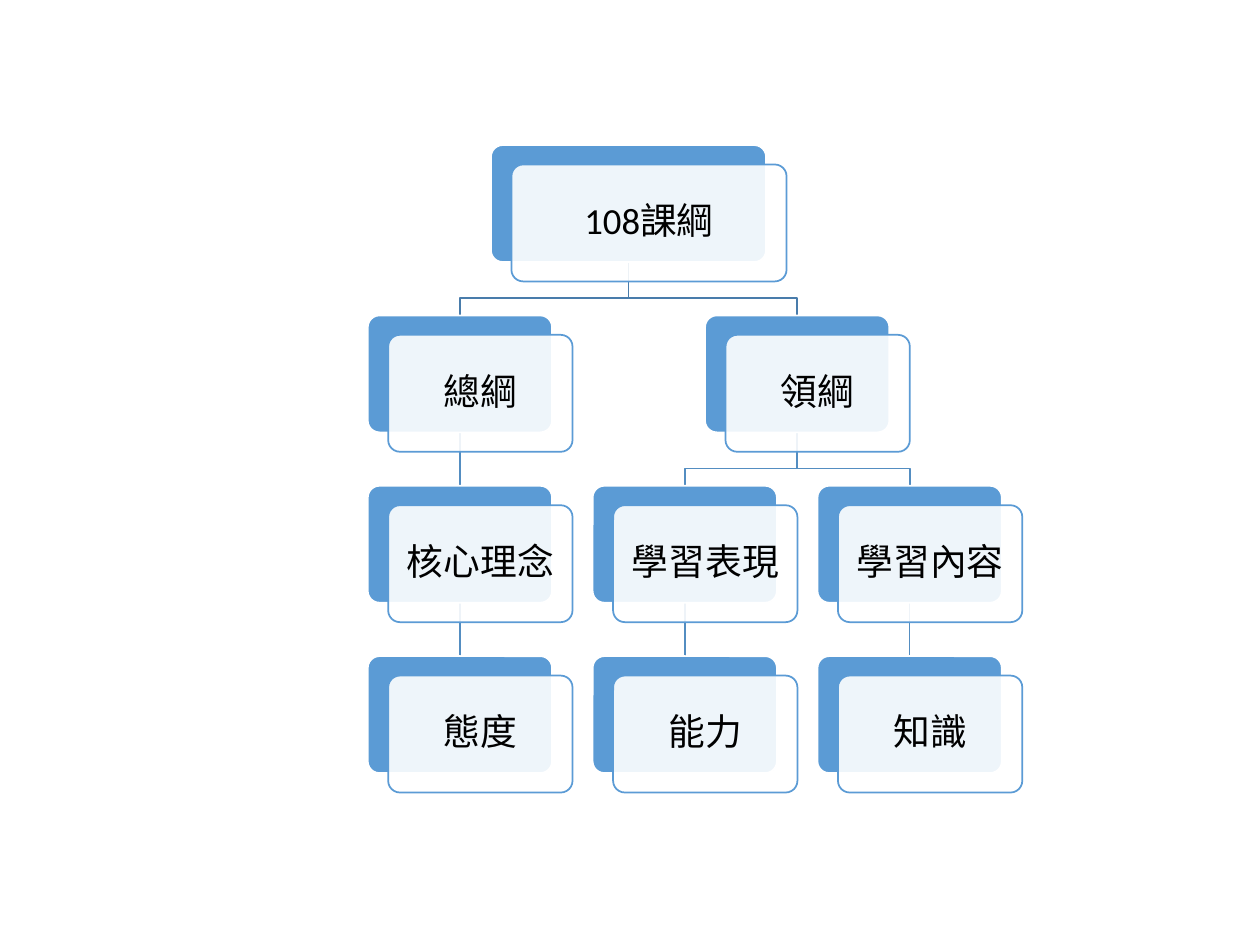
"""Build a one-slide curriculum hierarchy of layered cards."""
from lxml import etree
from pptx import Presentation
from pptx.dml.color import RGBColor
from pptx.enum.shapes import MSO_CONNECTOR, MSO_SHAPE
from pptx.enum.text import MSO_ANCHOR, PP_ALIGN
from pptx.oxml.ns import qn
from pptx.util import Pt

ROUND = MSO_SHAPE.ROUNDED_RECTANGLE
STRAIGHT = MSO_CONNECTOR.STRAIGHT
MIDDLE = MSO_ANCHOR.MIDDLE
CENTER = PP_ALIGN.CENTER

# name: (column, level, width, parent)
NODES = {
    "108課綱": (0.75, 0, 157.2, None),
    "總綱": (0, 1, 105.3, "108課綱"),
    "核心理念": (0, 2, 105.3, "總綱"),
    "態度": (0, 3, 105.3, "核心理念"),
    "領綱": (1.5, 1, 105.3, "108課綱"),
    "學習表現": (1, 2, 105.3, "領綱"),
    "能力": (1, 3, 105.3, "學習表現"),
    "學習內容": (2, 2, 105.3, "領綱"),
    "知識": (2, 3, 105.3, "學習內容"),
}
THEME = {
    "font": "Calibri",
    "size": Pt(21),
    "text": RGBColor.from_string("000000"),
    "accent": RGBColor.from_string("5B9BD5"),
    "white": RGBColor.from_string("FFFFFF"),
    "top_link": RGBColor.from_string("497CAB"),
    "link": RGBColor.from_string("538DC1"),
}
LEFT_CENTER, COL_STEP = 262.8, 128.5
TOP, ROW_STEP, HEIGHT = 82.9, 97.35, 66.8
SHIFT_X, SHIFT_Y = 11.7, 11.1
BEND = 20.8


def position(name):
    """Return the centre x and the top of a card."""
    col, level = NODES[name][:2]
    return LEFT_CENTER + col * COL_STEP, TOP + level * ROW_STEP


def add_link(slide, parent, child):
    """Join a parent card to its child, bending where columns differ."""
    x1, y1 = position(parent)
    x2, y2 = position(child)
    y1 += HEIGHT
    if x1 == x2:
        s = slide.shapes.add_connector(STRAIGHT, Pt(x1), Pt(y1), Pt(x2), Pt(y2))
        etree.SubElement(s._element.spPr, qn("a:effectLst"))
    else:
        fb = slide.shapes.build_freeform(Pt(x1), Pt(y1))
        bend = Pt(y1 + BEND)
        fb.add_line_segments([(Pt(x1), bend), (Pt(x2), bend), (Pt(x2), Pt(y2))], close=False)
        s = fb.convert_to_shape()
        s.fill.background()
        s.shadow.inherit = False
    s.line.color.rgb = THEME["link" if NODES[parent][1] else "top_link"]
    s.line.width = Pt(1)


def add_layer(slide, x, y, width, fill, line):
    """Add one rounded rectangle of a card."""
    s = slide.shapes.add_shape(ROUND, Pt(x), Pt(y), Pt(width), Pt(HEIGHT))
    s.adjustments[0] = 0.1
    s.shadow.inherit = False
    s.fill.solid()
    s.fill.fore_color.rgb = THEME[fill]
    s.line.color.rgb = THEME[line]
    s.line.width = Pt(1)
    return s


def add_card(slide, name):
    """Add the solid back layer and the translucent labelled front layer."""
    center, y = position(name)
    width = NODES[name][2]
    x = center - width / 2
    add_layer(slide, x, y, width, "accent", "white")
    s = add_layer(slide, x + SHIFT_X, y + SHIFT_Y, width, "white", "accent")
    color = s._element.spPr.find(qn("a:solidFill"))[0]
    etree.SubElement(color, qn("a:alpha"), val="90000")
    tf = s.text_frame
    tf.text = name
    tf.word_wrap = True
    tf.vertical_anchor = MIDDLE
    tf.margin_left = tf.margin_right = Pt(8)
    tf.margin_top = tf.margin_bottom = Pt(8)
    p = tf.paragraphs[0]
    p.alignment = CENTER
    p.line_spacing = 0.9
    for r in p.runs:
        r.font.name = THEME["font"]
        r.font.size = THEME["size"]
        r.font.color.rgb = THEME["text"]


def main():
    """Draw the links behind the cards and save the deck."""
    prs = Presentation()
    prs.slide_width, prs.slide_height = Pt(720), Pt(540)
    slide = prs.slides.add_slide(prs.slide_layouts[6])
    for name, node in NODES.items():
        if node[3]:
            add_link(slide, node[3], name)
    for name in NODES:
        add_card(slide, name)
    prs.save("out.pptx")


if __name__ == "__main__":
    main()
